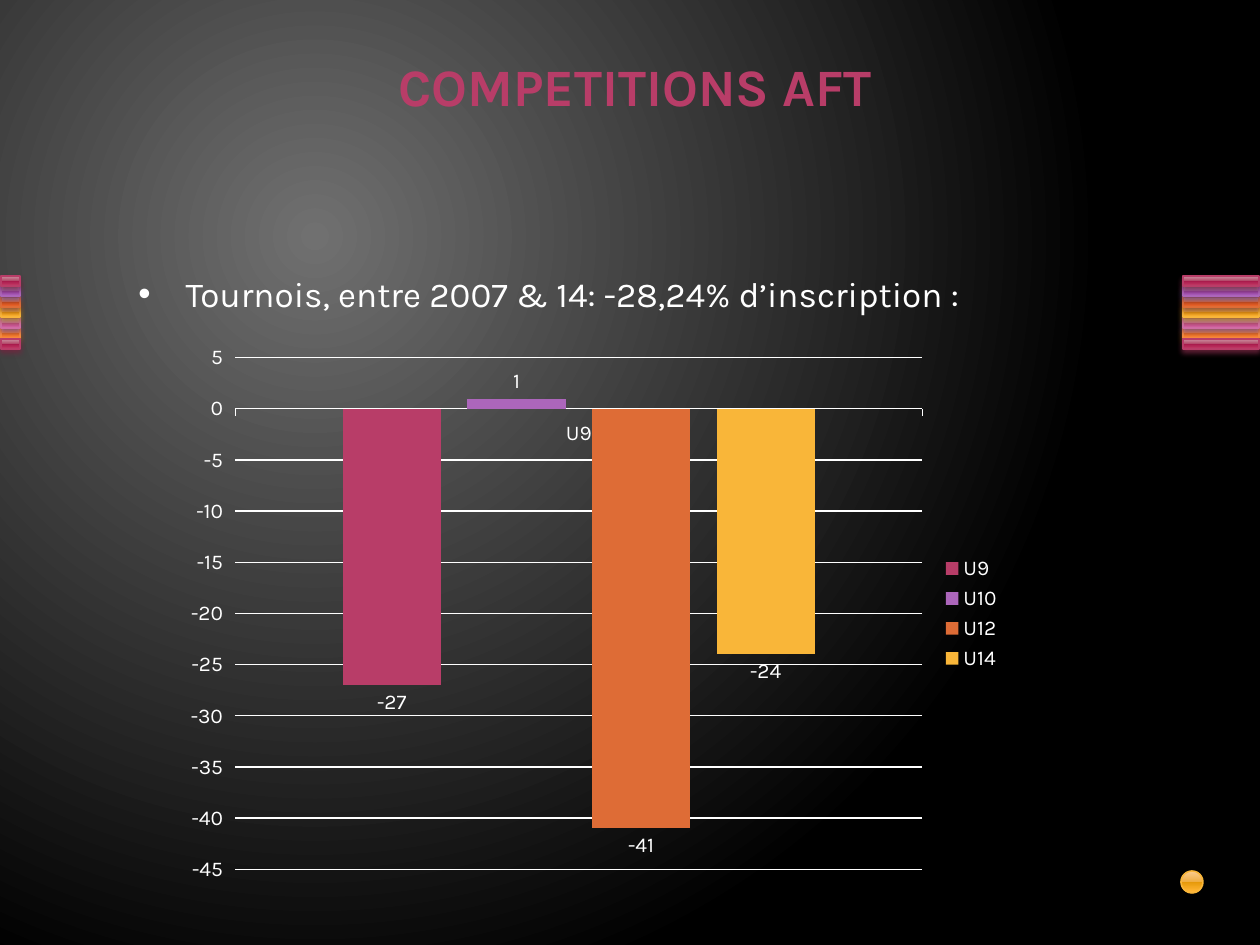
import pptx
import pptx.chart.data
import pptx.dml.color
import pptx.enum.chart
import pptx.enum.shapes
import pptx.enum.text
import pptx.oxml
import pptx.oxml.ns
import pptx.util

PX = 914400 / 126
FONT = "Karla"
HUE = {"rose": "B83D68", "mauve": "AC66BB", "rust": "DE6C36", "gold": "F9B639",
       "pink": "CF6DA4", "peach": "FA8D3D", "white": "FFFFFF"}
# Five gloss shades and a shadow for each hue
GLOSS = {
    "rose": ("CE94A2 B34869 A61749 C13764 CA5D7C", "722640"),
    "mauve": ("C6A2D0 A666B4 8F3EA1 AD5DBF BA76CA", "6A3F73"),
    "rust": ("E7A493 D66B42 CC4809 E9642C F07B55", "894321"),
    "gold": ("FBCC93 EFAE43 E59807 FFB432 FFBE5F", "9A7023"),
    "pink": ("DDA4C1 C66B9D B34181 D361A0 DC79AE", "804365"),
    "peach": ("FBB494 F08745 E5670B FF8736 FF9961", "9A5726"),
}
STOPS = (0, 49, 49, 92, 100)
NS = pptx.oxml.ns.nsdecls("a")
RGB = pptx.dml.color.RGBColor.from_string
KIND = pptx.enum.shapes.MSO_SHAPE


def blend(pairs, shade):
    stops = "".join(f'<a:gs pos="{pos * 1000}"><a:srgbClr val="{hue}"/></a:gs>'
                    for pos, hue in pairs)
    return pptx.oxml.parse_xml(
        f'<a:gradFill {NS} rotWithShape="1"><a:gsLst>{stops}</a:gsLst>{shade}</a:gradFill>')


def gloss(kind, box, name, cast=True):
    shape = slide.shapes.add_shape(kind, *(round(n * PX) for n in box))
    shape.line.color.rgb = RGB(HUE[name])
    shape.line.width = pptx.util.Pt(0.9)
    shape.shadow.inherit = False
    shades, dark = GLOSS[name]
    props = shape.element.spPr
    props.insert(2, blend(zip(STOPS, shades.split()), '<a:lin ang="5400000" scaled="0"/>'))
    if cast:
        props.find(pptx.oxml.ns.qn("a:effectLst")).append(pptx.oxml.parse_xml(
            f'<a:outerShdw {NS} blurRad="39370" dist="25400" dir="5400000" rotWithShape="0">'
            f'<a:srgbClr val="{dark}"><a:alpha val="83000"/></a:srgbClr></a:outerShdw>'))


deck = pptx.Presentation()
deck.slide_width = round(1260 * PX)
deck.slide_height = round(945 * PX)
slide = deck.slides.add_slide(deck.slide_layouts[6])

# Background glow
slide.background.fill.solid()
back = slide.element.xpath("p:cSld/p:bg/p:bgPr")[0]
back.replace(back[0], blend(
    [(0, "707070"), (100, "000000")],
    '<a:path path="circle"><a:fillToRect l="50000" t="50000" r="100000" b="100000"/></a:path>'))

# Striped bands at both edges, stacked from the bottom up, closing stripe last
bands = ["rose", "mauve", "rust", "gold", "pink", "peach", "rose"]
for left, wide in ((1, 19), (1183, 76)):
    for row in (5, 4, 3, 2, 1, 0, 6):
        gloss(KIND.RECTANGLE, (left, 276 + row * 21 // 2, wide, 10), bands[row])

# Corner dot
gloss(KIND.OVAL, (1181, 871, 22, 22), "gold", cast=False)

# Title and bullet line
for box, text, size, hue in (
        ((105, 37, 1061, 86), "COMPETITIONS AFT", 30, "rose"),
        ((126, 266, 1029, 60), "Tournois, entre 2007 & 14: -28,24% d’inscription\u00a0:", 20, "white")):
    frame = slide.shapes.add_textbox(*(round(n * PX) for n in box)).text_frame
    frame.word_wrap = True
    para = frame.paragraphs[0]
    para.text = text
    if hue == "rose":
        frame.vertical_anchor = pptx.enum.text.MSO_ANCHOR.BOTTOM
        para.alignment = pptx.enum.text.PP_ALIGN.CENTER
    else:
        props = para._p.get_or_add_pPr()
        props.set("marL", "342900")
        props.set("indent", "-342900")
        props.append(pptx.oxml.parse_xml(f'<a:buFont {NS} typeface="Arial"/>'))
        props.append(pptx.oxml.parse_xml(f'<a:buChar {NS} char="•"/>'))
    para.font.name = FONT
    para.font.size = pptx.util.Pt(size)
    para.font.bold = hue == "rose"
    para.font.color.rgb = RGB(HUE[hue])

# Column chart
data = pptx.chart.data.CategoryChartData()
data.categories = ["U9"]
for name, val in (("U9", -27), ("U10", 1), ("U12", -41), ("U14", -24)):
    data.add_series(name, [val])
chart = slide.shapes.add_chart(
    pptx.enum.chart.XL_CHART_TYPE.COLUMN_CLUSTERED,
    *(round(n * PX) for n in (174, 334, 840, 559)), data).chart
chart.has_title = False
chart.font.name = FONT
chart.font.size = pptx.util.Pt(12)
chart.font.color.rgb = RGB(HUE["white"])
chart.has_legend = True
chart.legend.position = pptx.enum.chart.XL_LEGEND_POSITION.RIGHT
chart.legend.include_in_layout = False

plot = chart.plots[0]
plot.gap_width = 219
plot.overlap = -27
plot.vary_by_categories = False
for bar, hue in zip(plot.series, bands):
    bar.invert_if_negative = False
    bar.format.fill.solid()
    bar.format.fill.fore_color.rgb = RGB(HUE[hue])
    bar.data_labels.show_value = True
    bar.data_labels.position = pptx.enum.chart.XL_LABEL_POSITION.OUTSIDE_END

# Axes
chart.value_axis.format.line.fill.background()
for line in (chart.category_axis.format.line, chart.value_axis.major_gridlines.format.line):
    line.color.rgb = RGB(HUE["white"])
    line.width = pptx.util.Pt(0.75)

deck.save("out.pptx")
